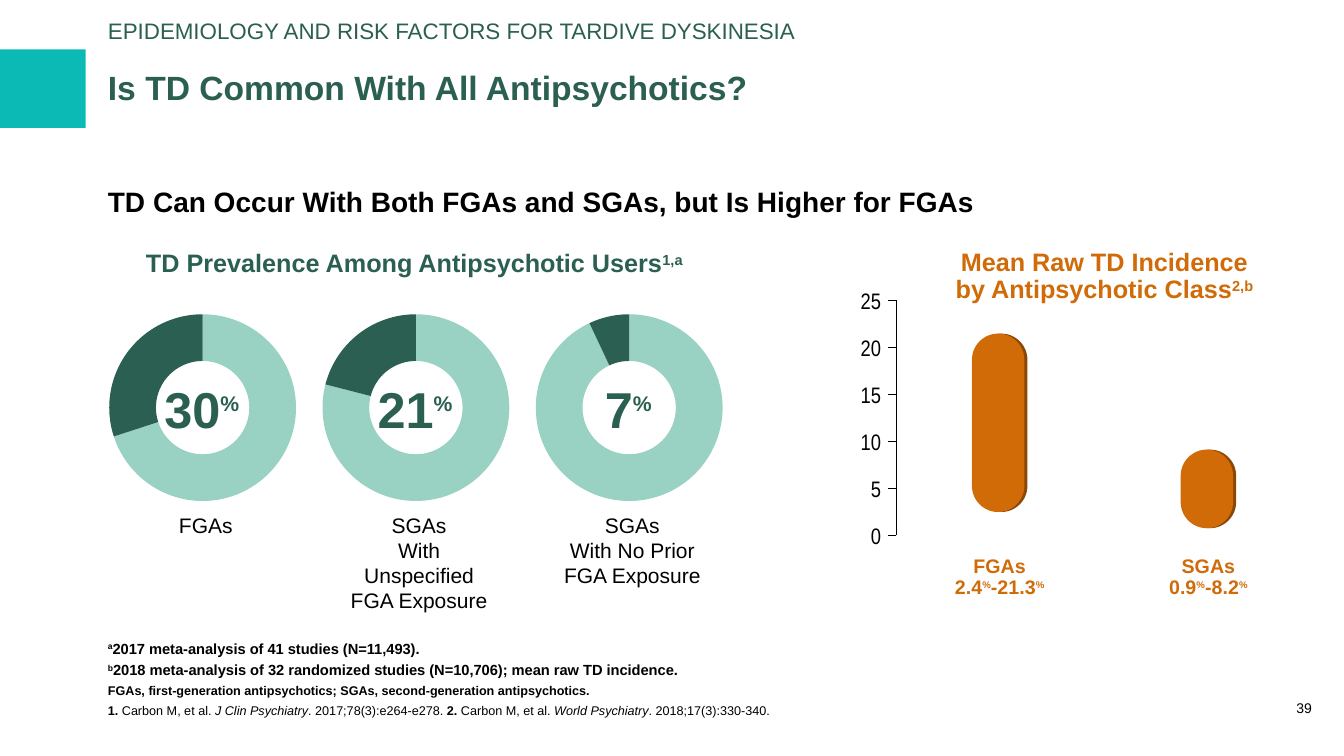
from lxml import etree
from pptx import Presentation
from pptx.chart.data import CategoryChartData
from pptx.dml.color import RGBColor
from pptx.enum.chart import XL_CHART_TYPE
from pptx.enum.shapes import MSO_CONNECTOR, MSO_SHAPE
from pptx.enum.text import MSO_ANCHOR, MSO_AUTO_SIZE, PP_ALIGN
from pptx.oxml.ns import qn
from pptx.util import Inches, Pt

LEFT, CENTER, RIGHT = PP_ALIGN.LEFT, PP_ALIGN.CENTER, PP_ALIGN.RIGHT
TOP, MIDDLE, BOTTOM = MSO_ANCHOR.TOP, MSO_ANCHOR.MIDDLE, MSO_ANCHOR.BOTTOM
NO_AUTOFIT = MSO_AUTO_SIZE.NONE
RECTANGLE, ROUNDED = MSO_SHAPE.RECTANGLE, MSO_SHAPE.ROUNDED_RECTANGLE
STRAIGHT = MSO_CONNECTOR.STRAIGHT
DOUGHNUT = XL_CHART_TYPE.DOUGHNUT

TEAL = RGBColor(0x0B, 0xBA, 0xB4)
GREEN = RGBColor(0x2B, 0x5F, 0x51)
MINT = RGBColor(0x99, 0xD1, 0xC2)
ORANGE = RGBColor(0xD0, 0x6B, 0x08)
BROWN = RGBColor(0x8A, 0x47, 0x05)
BLACK = RGBColor(0, 0, 0)

deck = Presentation()
deck.slide_width, deck.slide_height = Inches(13.33), Inches(7.5)
COLUMN, ROW = deck.slide_width / 100, deck.slide_height / 100
page = deck.slides.add_slide(deck.slide_layouts[5])
shapes = page.shapes


def grid(left, top, width, height):
    return [round(left * COLUMN), round(top * ROW), round(width * COLUMN), round(height * ROW)]


def write(box, lines, size, color, bold=False, align=LEFT, anchor=TOP, spacing=None,
          margins=(0, 0, 0, 0), after=0, wrap=True, face="Arial"):
    frame = box.text_frame
    frame.auto_size = NO_AUTOFIT
    frame.word_wrap = wrap
    frame.vertical_anchor = anchor
    frame.margin_left, frame.margin_top, frame.margin_right, frame.margin_bottom = map(Inches, margins)
    for index, line in enumerate(lines):
        para = frame.add_paragraph() if index else frame.paragraphs[0]
        para.alignment = align
        para.line_spacing = spacing
        para.space_before = Pt(0)
        para.space_after = Pt(after if index < len(lines) - 1 else 0)
        para.font.name, para.font.size, para.font.bold = face, Pt(size), bold
        para.font.color.rgb = color
        for text, style in line:
            for part_index, part in enumerate(text.split("\n")):
                if part_index:
                    para.add_line_break()
                span = para.add_run()
                span.text = part
                if "size" in style:
                    span.font.size = Pt(style["size"])
                if "bold" in style:
                    span.font.bold = style["bold"]
                if "italic" in style:
                    span.font.italic = style["italic"]
                if "raised" in style:
                    span.font._element.set("baseline", str(style["raised"] * 1000))


accent = shapes.add_shape(RECTANGLE, *grid(0, 6.53, 6.38, 10.4))
accent.shadow.inherit = False
accent.fill.solid()
accent.fill.fore_color.rgb = TEAL
accent.line.fill.background()

title = shapes.title
title.left, title.top, title.width, title.height = grid(8.03, 5.2, 73.97, 13.2)
write(title, [[("Is TD Common With All Antipsychotics?", {})]], 24, GREEN, True,
      anchor=MIDDLE, spacing=0.95)

page_number = shapes.add_textbox(*grid(95.8, 89.07, 2.48, 5.73))
write(page_number, [[("39", {})]], 10, BLACK, align=CENTER, anchor=BOTTOM, spacing=0.95)

section = shapes.add_textbox(*grid(8.03, 2.4, 76.97, 3.73))
write(section, [[("EPIDEMIOLOGY AND RISK FACTORS FOR TARDIVE DYSKINESIA", {})]], 16, GREEN,
      anchor=MIDDLE, spacing=0.95)

headline = shapes.add_textbox(*grid(8.03, 24.8, 86.72, 6.27))
write(headline, [[("TD Can Occur With Both FGAs and SGAs, but Is Higher for FGAs", {})]],
      20, BLACK, True, spacing=0.95)

prevalence_heading = shapes.add_textbox(*grid(8.1, 30.53, 45.46, 8.93))
write(prevalence_heading,
      [[("TD Prevalence Among Antipsychotic Users", {}), ("1,a", {"raised": 30})]],
      18, GREEN, True, CENTER, MIDDLE, 0.9, (0, 0.05, 0, 0.05))

incidence_heading = shapes.add_textbox(*grid(64.55, 32.4, 35.26, 8.93))
write(incidence_heading,
      [[("Mean Raw TD Incidence\nby Antipsychotic Class", {}), ("2,b", {"raised": 30})]],
      18, ORANGE, True, CENTER, TOP, 0.9, (0, 0.05, 0, 0.05))

AXIS_X, TICK_X, AXIS_TOP, AXIS_BOTTOM = 66.69, 66.09, 39.73, 70.8
TICK_STEP = (AXIS_BOTTOM - AXIS_TOP) / 5
axis_lines = [(AXIS_X, AXIS_BOTTOM, AXIS_X, AXIS_TOP)]
for tick in range(6):
    tick_y = AXIS_BOTTOM - tick * TICK_STEP
    axis_lines.append((TICK_X, tick_y, AXIS_X, tick_y))
    tick_label = shapes.add_textbox(*grid(64.06, tick_y - 1.8, 1.5, 3.6))
    write(tick_label, [[(str(tick * 5), {})]], 16, BLACK, align=RIGHT, anchor=MIDDLE,
          wrap=False, face="Arial Narrow")
for ends in axis_lines:
    axis_line = shapes.add_connector(STRAIGHT, *grid(*ends))
    axis_line.line.color.rgb = BLACK
    axis_line.line.width = Pt(0.5)
    etree.SubElement(axis_line._element.spPr, qn("a:effectLst"))

PERCENT = ("%", {"size": 12, "raised": 36})
incidence_ranges = [("FGAs\n2.4", "-21.3", 44.13, 23.6), ("SGAs\n0.9", "-8.2", 59.47, 10.4)]
for index, (low, high, bar_top, bar_height) in enumerate(incidence_ranges):
    class_left = 69.47 + index * 15.53
    range_label = shapes.add_textbox(*grid(class_left, 70.53, 9.83, 11.6))
    write(range_label, [[(low, {}), PERCENT, (high, {}), PERCENT]], 14, ORANGE, True,
          CENTER, MIDDLE, Pt(15), wrap=False)
    for offset, color in ((3.08, BROWN), (2.85, ORANGE)):
        bar = shapes.add_shape(ROUNDED, *grid(class_left + offset, bar_top, 3.9, bar_height))
        bar.adjustments[0] = 0.5
        bar.shadow.inherit = False
        bar.fill.solid()
        bar.fill.fore_color.rgb = color
        bar.line.fill.background()

footnotes = shapes.add_textbox(*grid(8.03, 84.53, 86.72, 10.4))
PLAIN, JOURNAL = {"bold": False}, {"bold": False, "italic": True}
write(footnotes, [
    [("a", {"raised": 30}), ("2017 meta-analysis of 41 studies (N=11,493).", {})],
    [("b", {"raised": 30}),
     ("2018 meta-analysis of 32 randomized studies (N=10,706); mean raw TD incidence.", {})],
    [("FGAs, first-generation antipsychotics; SGAs, second-generation antipsychotics.", {})],
    [("1. ", {}), ("Carbon M, et al. ", PLAIN), ("J Clin Psychiatry", JOURNAL),
     (". 2017;78(3):e264-e278. ", PLAIN), ("2.", {}), (" Carbon M, et al. ", PLAIN),
     ("World Psychiatry", JOURNAL), (". 2018;17(3):330-340.", PLAIN)],
], 10.5, BLACK, True, anchor=BOTTOM, after=3)
for para in footnotes.text_frame.paragraphs[2:]:
    para.font.size = Pt(9)

RING_LAYOUT = {"layoutTarget": "inner", "xMode": "edge", "yMode": "edge",
               "x": 0.21, "y": 0.06, "w": 0.58, "h": 0.87}
prevalences = [(30, "FGAs"), (21, "SGAs\nWith Unspecified FGA Exposure"),
               (7, "SGAs\nWith No Prior\nFGA Exposure")]
for index, (percent, group) in enumerate(prevalences):
    shift = index * 15.87
    ring_data = CategoryChartData()
    ring_data.categories = ["1", "2"]
    ring_data.add_series("Series 1", (100 - percent, percent))
    ring = shapes.add_chart(DOUGHNUT, *grid(3.08 + shift, 39.87, 24, 28.4), ring_data).chart
    ring.has_legend = False
    ring.has_title = False
    ring.font.name, ring.font.size = "Arial", Pt(10)
    ring.font.color.rgb = BLACK
    for point_index, color in enumerate((MINT, GREEN)):
        point = ring.plots[0].series[0].points[point_index]
        point.format.fill.solid()
        point.format.fill.fore_color.rgb = color
        point.format.line.fill.background()
    plot_area = ring._chartSpace.chart.plotArea
    for hole in plot_area.iter(qn("c:holeSize")):
        hole.set("val", "60")
    for automatic in plot_area.findall(qn("c:layout")):
        plot_area.remove(automatic)
    layout = etree.Element(qn("c:layout"))
    manual = etree.SubElement(layout, qn("c:manualLayout"))
    for name, value in RING_LAYOUT.items():
        etree.SubElement(manual, qn("c:" + name)).set("val", str(value))
    plot_area.insert(0, layout)

    group_label = shapes.add_textbox(*grid(8.55 + shift, 67.07, 12.98, 14.8))
    write(group_label, [[(group, {})]], 15, BLACK, align=CENTER, margins=(0.17, 0.05, 0.1, 0.05))
    percent_label = shapes.add_textbox(*grid(11.33 + shift, 49.33, 7.35, 9.47))
    write(percent_label, [[(str(percent), {}), ("%", {"size": 26, "raised": 48})]],
          36, GREEN, True, CENTER, MIDDLE, wrap=False)

deck.save("out.pptx")
